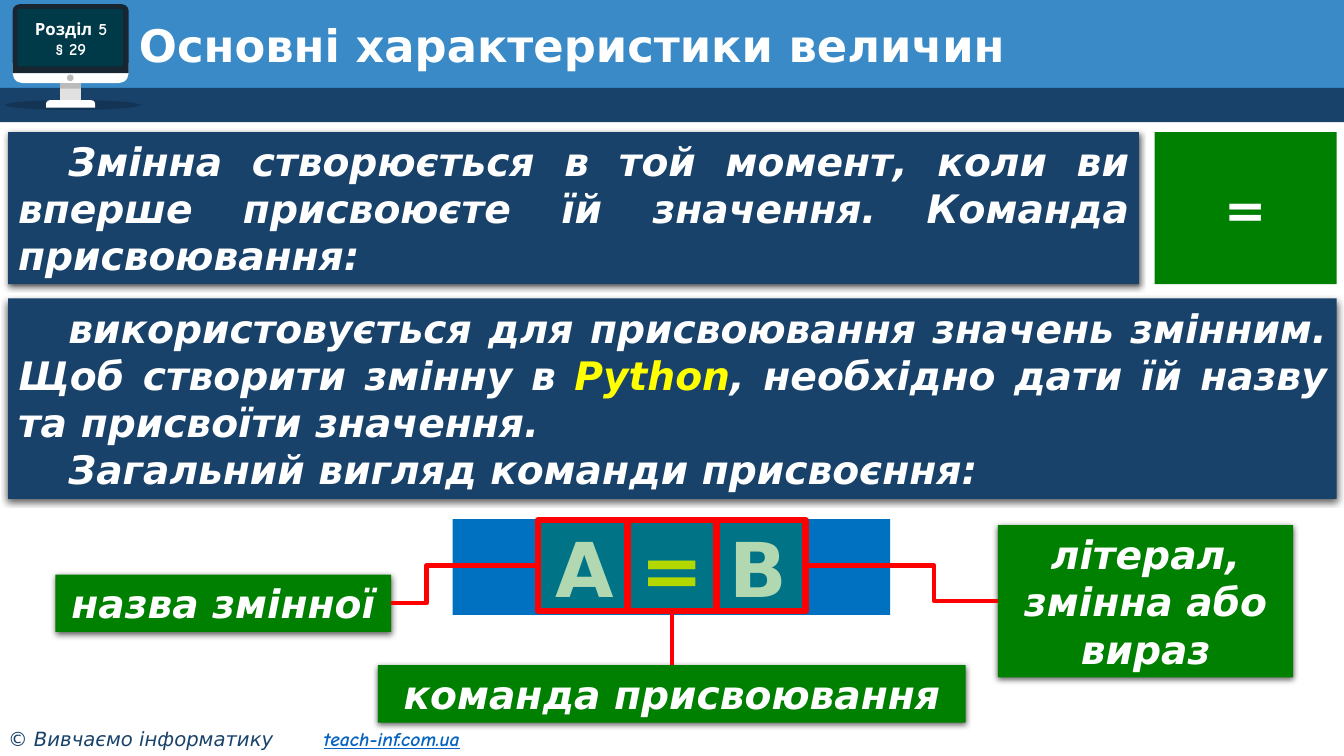
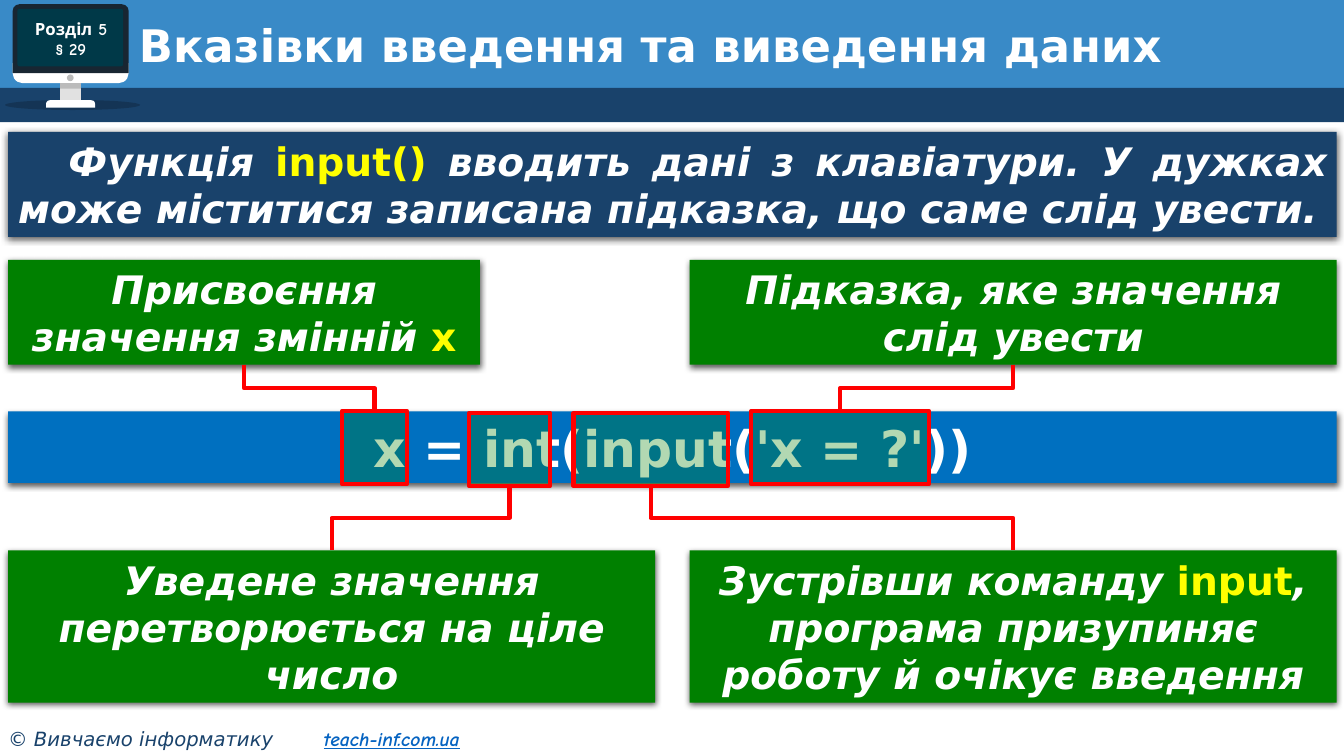
from typing import NamedTuple

from lxml import etree
from pptx import Presentation
from pptx.dml.color import RGBColor
from pptx.enum.shapes import MSO_CONNECTOR, MSO_SHAPE
from pptx.enum.text import MSO_ANCHOR, PP_ALIGN
from pptx.oxml.ns import qn
from pptx.util import Pt

RECT = MSO_SHAPE.RECTANGLE
OVAL = MSO_SHAPE.OVAL
ROUNDED = MSO_SHAPE.ROUNDED_RECTANGLE
ROUNDED_TOP = MSO_SHAPE.ROUND_2_SAME_RECTANGLE
STRAIGHT = MSO_CONNECTOR.STRAIGHT
ELBOW = MSO_CONNECTOR.ELBOW
LEFT = PP_ALIGN.LEFT
CENTER = PP_ALIGN.CENTER
JUSTIFY = PP_ALIGN.JUSTIFY
MIDDLE = MSO_ANCHOR.MIDDLE

SANS = "DejaVu Sans"
COMIC = "Comic Neue"
NAVY = "19426B"
SKY = "398AC7"
BLUE = "0070C0"
GREEN = "008000"
RED = "FF0000"
YELLOW = "FFFF00"
WHITE = "FFFFFF"
BLACK = "000000"
LINK = "0563C1"
CASING = "182632"
SCREEN = "003948"
STEEL = "E1E1E1"
GREY = "BBBBBB"


class Box(NamedTuple):
    """A rectangle in points."""

    left: float
    top: float
    width: float
    height: float

    @property
    def right(self):
        """Return the right edge."""
        return self.left + self.width

    @property
    def bottom(self):
        """Return the bottom edge."""
        return self.top + self.height

    @property
    def center(self):
        """Return the horizontal centre."""
        return self.left + self.width / 2

    @property
    def middle(self):
        """Return the vertical centre."""
        return self.top + self.height / 2

    def inner(self, left, top, width, height):
        """Return a box placed relative to this one."""
        return Box(self.left + left, self.top + top, width, height)

    def lengths(self):
        """Return the four values as slide lengths."""
        return [Pt(value) for value in self]


def rgb(color):
    """Turn a hex string into a colour."""
    return RGBColor.from_string(color)


def add_node(parent, tag, **attributes):
    """Append a drawing element to a parent."""
    return etree.SubElement(parent, qn(tag), attributes)


def set_font(font, size=None, name=None, color=None, bold=None, italic=None):
    """Apply the given font properties."""
    font.size = Pt(size) if size else None
    font.name = name
    font.bold = bold
    font.italic = italic
    if color:
        font.color.rgb = rgb(color)


def add_block(page, box, fill, kind=RECT, opacity=None, radius=None):
    """Draw a filled shape without outline or shadow."""
    shape = page.shapes.add_shape(kind, *box.lengths())
    shape.shadow.inherit = False
    shape.fill.solid()
    shape.fill.fore_color.rgb = rgb(fill)
    shape.line.fill.background()
    if radius is not None:
        shape.adjustments[0] = radius
    if opacity:
        tint = shape.element.spPr.find(qn("a:solidFill")).find(qn("a:srgbClr"))
        add_node(tint, "a:alpha", val=str(opacity * 1000))
    return shape


def add_shadow(shape):
    """Give a shape a soft shadow below it."""
    effects = shape.element.spPr.find(qn("a:effectLst"))
    shadow = add_node(effects, "a:outerShdw", blurRad=str(Pt(4.5)),
                      dist=str(Pt(1.5)), dir="5400000", algn="t", rotWithShape="0")
    add_node(add_node(shadow, "a:srgbClr", val=BLACK), "a:alpha", val="63000")


def write(shape, paragraphs, align=CENTER, indent=0, accent_italic=None, **font):
    """Fill a shape with paragraphs; a one-item tuple marks an accented span."""
    frame = shape.text_frame
    frame.word_wrap = True
    frame.vertical_anchor = MIDDLE
    for index, spans in enumerate(paragraphs):
        para = frame.add_paragraph() if index else frame.paragraphs[0]
        para.alignment = align
        if indent:
            para._p.get_or_add_pPr().set("indent", str(Pt(indent)))
        set_font(para.font, **font)
        for text in spans:
            span = para.add_run()
            if isinstance(text, tuple):
                span.text = text[0]
                set_font(span.font, color=YELLOW, italic=accent_italic)
            else:
                span.text = text


def add_panel(page, box, fill, *paragraphs, size=28, italic=True, shadow=True, **style):
    """Draw a coloured panel with bold white text."""
    shape = add_block(page, box, fill)
    if shadow:
        add_shadow(shape)
    write(shape, paragraphs, size=size, name=SANS, color=WHITE, bold=True,
          italic=italic, **style)
    return box


def add_statement(page, box, *paragraphs, **style):
    """Draw a navy panel of justified text with indented first lines."""
    return add_panel(page, box, NAVY, *paragraphs, align=JUSTIFY, indent=36, **style)


def add_highlight(page, box, weight):
    """Draw a translucent frame over a piece of code."""
    shape = add_block(page, box, GREEN, opacity=30)
    shape.line.color.rgb = rgb(RED)
    shape.line.width = Pt(weight)
    return box


def add_link(page, kind, start, end):
    """Draw a red connector between two points and return its properties."""
    link = page.shapes.add_connector(kind, *[Pt(value) for value in (*start, *end)])
    link.line.color.rgb = rgb(RED)
    link.line.width = Pt(3)
    add_node(link.element.spPr, "a:effectLst")
    return link.element.spPr


def link_across(page, start, end, bend):
    """Join two points with a horizontal elbow that turns at a share of its width."""
    geometry = add_link(page, ELBOW, start, end).find(qn("a:prstGeom"))
    add_node(geometry.find(qn("a:avLst")), "a:gd", name="adj1",
             fmla=f"val {round(bend * 100000)}")


def link_down(page, upper, lower):
    """Join an upper point to a lower one with a vertical elbow."""
    center, middle = (upper[0] + lower[0]) / 2, (upper[1] + lower[1]) / 2
    reach, drop = (lower[0] - upper[0]) / 2, (lower[1] - upper[1]) / 2
    properties = add_link(page, ELBOW, (center - drop, middle + reach),
                          (center + drop, middle - reach))
    properties.find(qn("a:xfrm")).set("rot", "5400000")


def add_monitor(page, box):
    """Draw the monitor with the section number."""
    add_block(page, box.inner(0, 68.4, 96.4, 7.2), BLACK, OVAL, opacity=20)
    chin = add_block(page, box.inner(5.4, 42, 82.9, 14.4), WHITE, ROUNDED_TOP, radius=0.5)
    chin.rotation = 180
    add_block(page, box.inner(5.4, 0, 82.9, 49.3), CASING, ROUNDED_TOP, radius=0.1)
    add_block(page, box.inner(39.3, 56.4, 15, 12.4), STEEL)
    add_block(page, box.inner(39.3, 56.4, 15, 4), GREY)
    add_block(page, box.inner(29.3, 68.6, 35, 5.2), WHITE, ROUNDED_TOP, radius=0.5)
    add_block(page, box.inner(44.2, 50.2, 4.8, 4.8), GREY, OVAL)
    add_block(page, box.inner(8.8, 3.4, 75.6, 41), SCREEN, ROUNDED, radius=0.04)
    label = page.shapes.add_textbox(*box.inner(5.8, 3.4, 82.8, 42.5).lengths())
    write(label, [["Розділ 5"], ["§ 29"]], size=12, name=COMIC, color=WHITE, bold=True)


def add_header(page, box, title):
    """Draw the bands, the monitor and the title."""
    add_block(page, box.inner(0, 0, box.width, 65.5), SKY)
    add_block(page, box.inner(0, 62.8, box.width, 24.4), NAVY)
    add_monitor(page, box.inner(3.6, 3, 96.4, 76))
    heading = page.shapes.add_textbox(*box.inner(92.2, 13, 844, 41.8).lengths())
    write(heading, [[title]], align=LEFT, size=32, name=SANS, color=WHITE, bold=True)
    heading.text_frame.paragraphs[0].line_spacing = 0.9


def add_footer(page, box):
    """Write the copyright line and the site address."""
    footer = page.shapes.add_textbox(*box.lengths())
    frame = footer.text_frame
    frame.word_wrap = True
    frame.margin_left = Pt(5.8)
    para = frame.paragraphs[0]
    tabs = add_node(para._p.get_or_add_pPr(), "a:tabLst")
    add_node(tabs, "a:tab", pos=str(Pt(225.4)), algn="l")
    para.font.size = Pt(14)
    para.font.italic = True
    owner, site = para.add_run(), para.add_run()
    owner.text = "© Вивчаємо інформатику\t"
    set_font(owner.font, name=SANS, color=NAVY)
    site.text = "teach-inf.com.ua"
    set_font(site.font, name=COMIC, color=LINK, bold=True)
    site.font.underline = True


def add_page(deck, title):
    """Add a blank page with the shared header and footer."""
    page = deck.slides.add_slide(deck.slide_layouts[6])
    add_header(page, Box(0, 0, 960, 87.2), title)
    add_footer(page, Box(0, 515.5, 375, 24.5))
    return page


def fill_assignment(page, body):
    """Explain the assignment command and label its parts."""
    add_statement(page, body.inner(0, 0, 807.8, 108.7), [
        "Змінна створюється в той момент, коли ви вперше присвоюєте їй значення. "
        "Команда присвоювання:"])
    add_panel(page, body.inner(body.width - 130, 0, 130, 108.7), GREEN, ["="],
              size=36, shadow=False)
    add_statement(
        page, body.inner(0, 118.8, body.width, 143.3),
        ["використовується для присвоювання значень змінним. Щоб створити змінну в ",
         ("Python",), ", необхідно дати їй назву та присвоїти значення."],
        ["Загальний вигляд команди присвоєння:"])
    add_panel(page, body.inner(317.5, 276.5, 312.5, 68.4), BLUE, ["A ", ("=",), " B"],
              size=54, italic=None, shadow=False)
    target, sign, source = [
        add_highlight(page, body.inner(378.7 + 63.7 * index, 277.2, 63.4, 64.8), 4.5)
        for index in range(3)]
    name = add_panel(page, body.inner(33.8, 316.1, 239.8, 41), GREEN, ["назва змінної"])
    command = add_panel(page, body.inner(264.2, 380.9, 419.8, 41), GREEN,
                        ["команда присвоювання"])
    value = add_panel(page, body.inner(707, 280.8, 211, 108.7), GREEN,
                      ["літерал, змінна або вираз"])
    link_across(page, (target.left, target.middle), (name.right, name.middle), 0.76)
    link_across(page, (source.right, source.middle), (value.left, value.middle), 0.67)
    add_link(page, STRAIGHT, (sign.center, command.top), (sign.center, sign.bottom))


def fill_input(page, body):
    """Explain the input function and label each piece of the code line."""
    add_statement(page, body.inner(0, 0, body.width, 74.9), [
        "Функція ", ("input() ",),
        "вводить дані з клавіатури. У дужках може міститися записана підказка, "
        "що саме слід увести."], accent_italic=False)
    add_panel(page, body.inner(0, 199.5, body.width, 51.1), BLUE,
              ["x = int(input('x = ?'))"], size=36, italic=None)
    wide = 462.2
    column = body.width - wide
    upper = [
        (0, 337, ["Присвоєння значення змінній ", ("х",)], 238.3, 46.8),
        (column, wide, ["Підказка, яке значення слід увести"], 530.6, 127.4)]
    lower = [
        (0, wide, ["Уведене значення перетворюється на ціле число"], 329, 58.3),
        (column, wide, ["Зустрівши команду ", ("input",),
                        ", програма призупиняє роботу й очікує введення"], 403.9, 110.2)]
    rows = [(upper, 91.4, 74.9, 199.5), (lower, 298.8, 108.7, 200.9)]
    for notes, top, height, code_top in rows:
        for left, width, spans, code_left, code_width in notes:
            note = add_panel(page, body.inner(left, top, width, height), GREEN, spans,
                             accent_italic=False)
            code = add_highlight(page, body.inner(code_left, code_top, code_width, 51.8), 3)
            first, second = sorted((note, code), key=lambda box: box.top)
            link_down(page, (first.center, first.bottom), (second.center, second.top))


def main():
    """Build the deck and save it."""
    deck = Presentation()
    deck.slide_width, deck.slide_height = Pt(960), Pt(540)
    body = Box(5.8, 94.3, 949, 421)
    fill_assignment(add_page(deck, "Основні характеристики величин"), body)
    fill_input(add_page(deck, "Вказівки введення та виведення даних"), body)
    deck.save("out.pptx")


if __name__ == "__main__":
    main()
